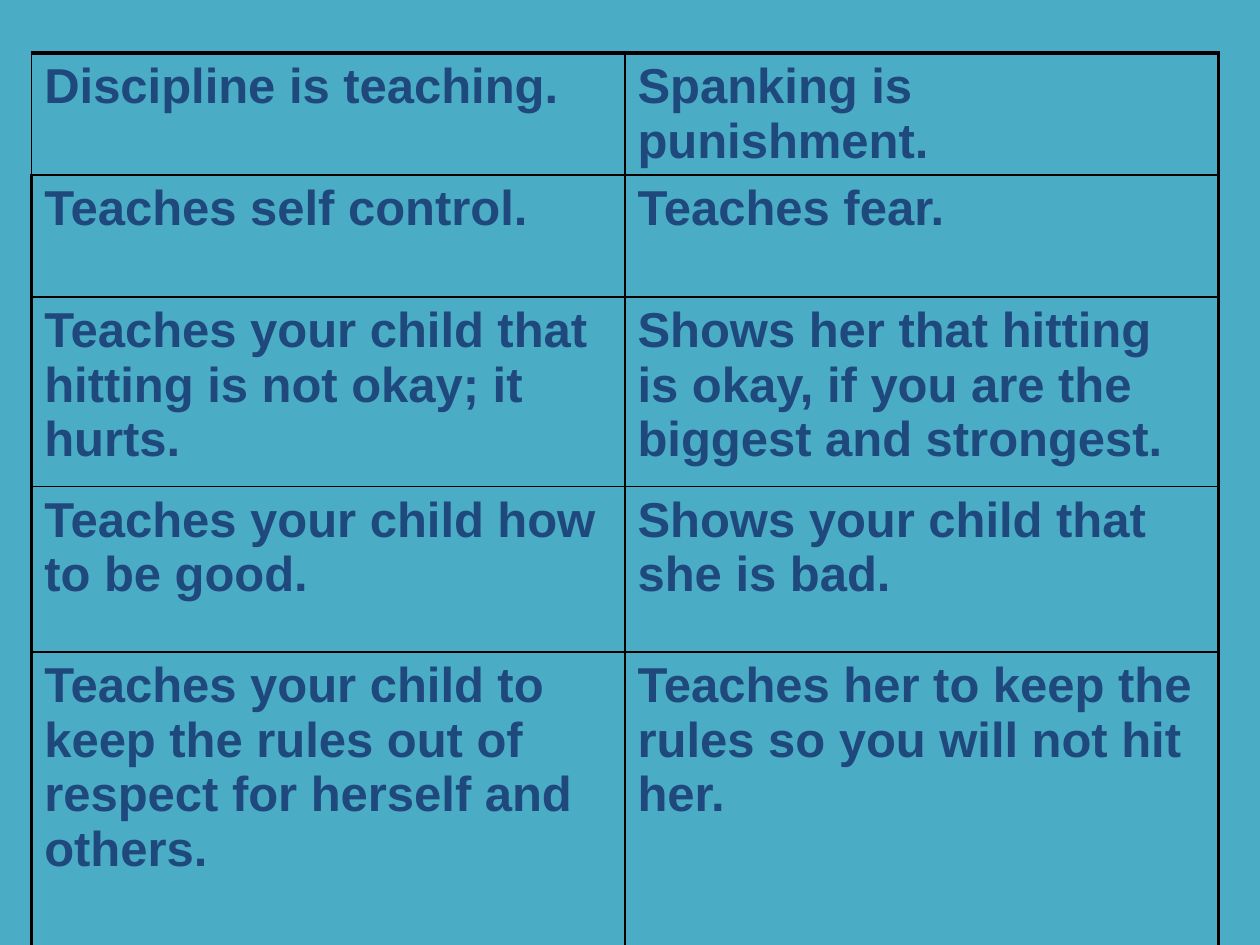
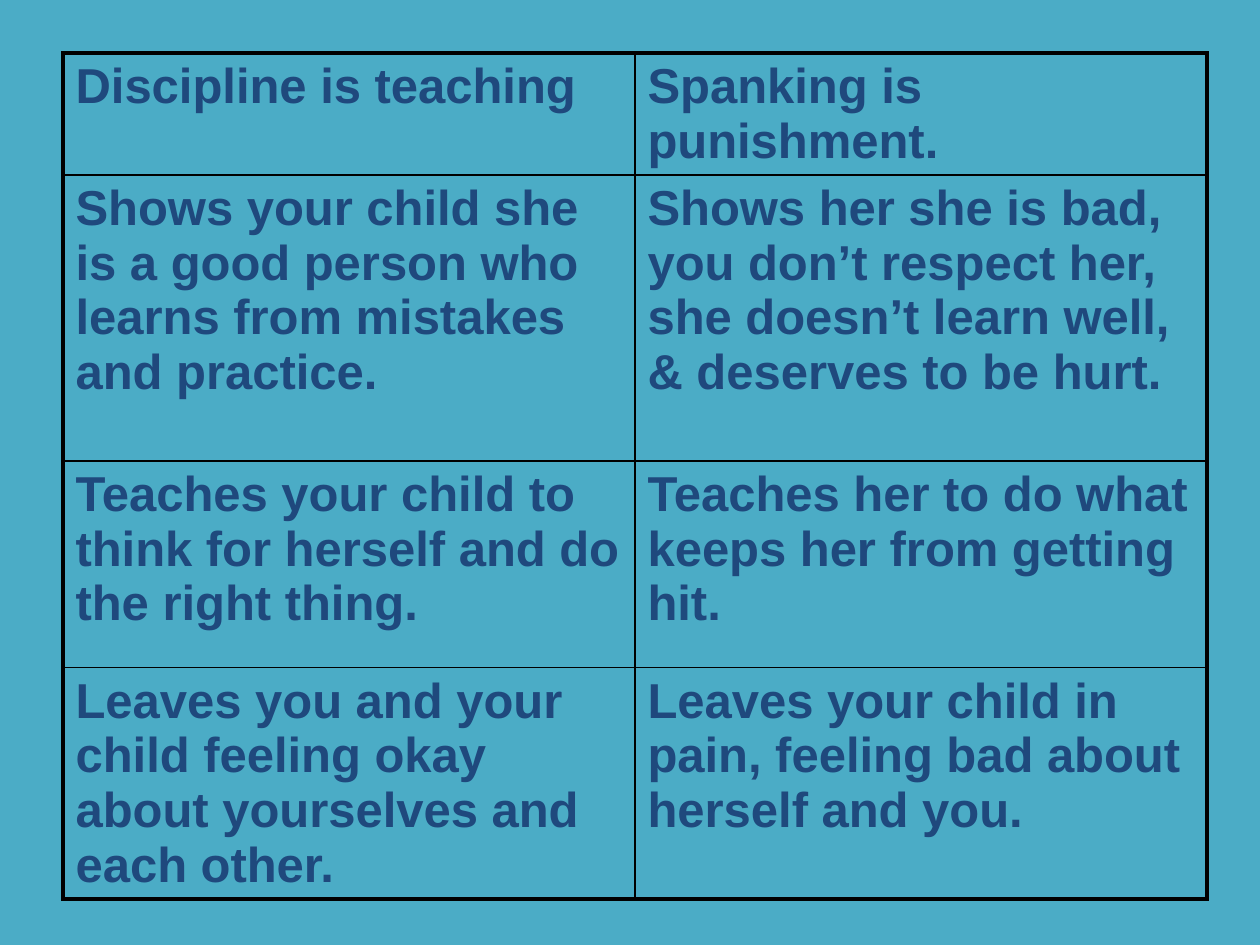
from dataclasses import dataclass

from lxml.etree import SubElement
from pptx import Presentation
from pptx.dml.color import RGBColor
from pptx.oxml.ns import qn
from pptx.util import Cm, Pt

# Content: place, row heights (cm) and rows of each comparison
COMPARISONS = [
    {
        "left": 0.64,
        "column_width": 11.96,
        "row_heights": [2.46, 2.46, 3.82, 3.33, 9.7, 2.72],
        "thin_left_rows": {0},
        "rows": [
            ("Discipline is teaching.", "Spanking is punishment."),
            ("Teaches self control.", "Teaches fear."),
            ("Teaches your child that hitting is not okay; it hurts.",
             "Shows her that hitting is okay, if you are the biggest and strongest."),
            ("Teaches your child how to be good.",
             "Shows your child that she is bad."),
            ("Teaches your child to keep the rules out of respect for herself and others.",
             "Teaches her to keep the rules so you will not hit her."),
            ("", ""),
        ],
    },
    {
        "left": 1.27,
        "column_width": 11.53,
        "row_heights": [2.46, 5.76, 4.17, 4.66],
        "thin_left_rows": set(),
        "rows": [
            ("Discipline is teaching", "Spanking is punishment."),
            ("Shows your child she is a good person who learns from mistakes and practice.",
             "Shows her she is bad, you don’t respect her, she doesn’t learn well, "
             "& deserves to be hurt."),
            ("Teaches your child to think for herself and do the right thing.",
             "Teaches her to do what keeps her from getting hit."),
            ("Leaves you and your child feeling okay about yourselves and each other.",
             "Leaves your child in pain, feeling bad about herself and you."),
        ],
    },
]


@dataclass(frozen=True)
class Theme:
    background: str = "4BACC6"
    text: str = "1F497D"
    border: str = "000000"
    font: str = "Arial"
    size: float = 28
    thin: float = 1
    thick: float = 2.25
    table_top: float = 1.07


THEME = Theme()


def set_borders(cell, widths):
    """Draw the cell's edges; widths maps L, R, T, B to points."""
    properties = cell._tc.get_or_add_tcPr()
    for side in "LRTB":
        line = SubElement(properties, qn(f"a:ln{side}"), w=str(Pt(widths[side])))
        fill = SubElement(line, qn("a:solidFill"))
        SubElement(fill, qn("a:srgbClr"), val=THEME.border)


def write_text(cell, text):
    run = cell.text_frame.paragraphs[0].add_run()
    run.text = text
    run.font.name = THEME.font
    run.font.size = Pt(THEME.size)
    run.font.bold = True
    run.font.color.rgb = RGBColor.from_string(THEME.text)


def add_comparison(slide, comparison):
    rows, heights = comparison["rows"], comparison["row_heights"]
    width = comparison["column_width"]
    frame = slide.shapes.add_table(
        len(rows), 2, Cm(comparison["left"]), Cm(THEME.table_top),
        Cm(2 * width), Cm(sum(heights)))
    table = frame.table
    table.first_row = table.horz_banding = False
    for column in table.columns:
        column.width = Cm(width)

    # Thick outer frame, thin inner lines
    for row_index, texts in enumerate(rows):
        table.rows[row_index].height = Cm(heights[row_index])
        for column_index, text in enumerate(texts):
            cell = table.cell(row_index, column_index)
            outer = {
                "L": column_index == 0 and row_index not in comparison["thin_left_rows"],
                "R": column_index == 1,
                "T": row_index == 0,
                "B": row_index == len(rows) - 1,
            }
            set_borders(cell, {side: THEME.thick if is_outer else THEME.thin
                               for side, is_outer in outer.items()})
            cell.fill.background()
            if text:
                write_text(cell, text)


def main():
    presentation = Presentation()
    presentation.slide_width, presentation.slide_height = Cm(25.4), Cm(19.05)
    blank_layout = presentation.slide_layouts[6]
    for comparison in COMPARISONS:
        slide = presentation.slides.add_slide(blank_layout)
        background = slide.background.fill
        background.solid()
        background.fore_color.rgb = RGBColor.from_string(THEME.background)
        add_comparison(slide, comparison)
    presentation.save("out.pptx")


if __name__ == "__main__":
    main()
